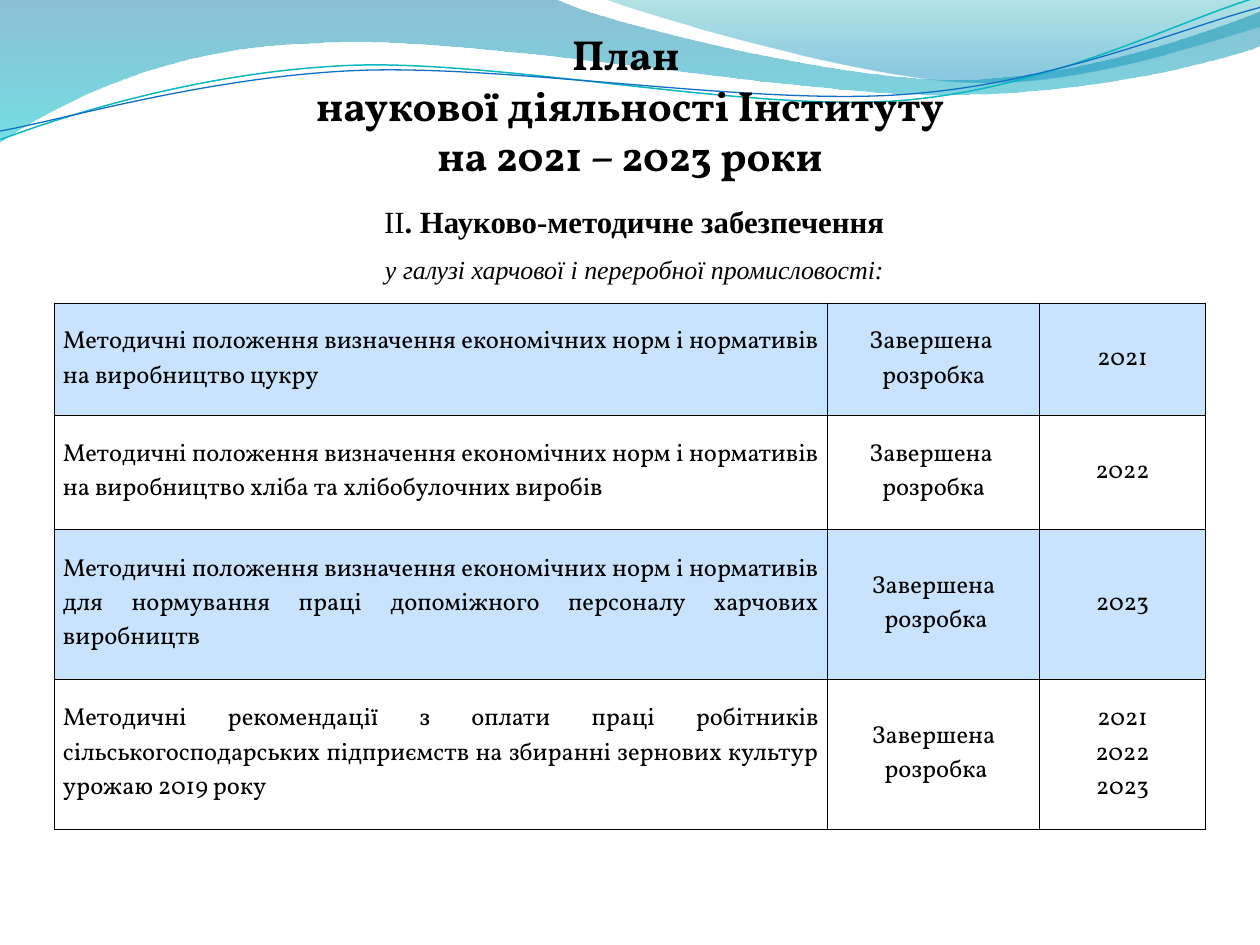
from dataclasses import dataclass
from math import cos, radians, sin
from typing import Optional

from lxml.etree import SubElement
from pptx import Presentation
from pptx.dml.color import RGBColor
from pptx.enum.text import MSO_ANCHOR as Anchor, PP_ALIGN as Align
from pptx.oxml.ns import qn
from pptx.util import Emu, Inches, Pt

Point = tuple[float, float]


@dataclass(frozen=True)
class Theme:
    text: str = "000000"
    band: str = "C8E3FB"
    heading_font: str = "Vollkorn"
    section_font: str = "Times New Roman"
    title: float = 24
    section: float = 17.6
    field: float = 14.8
    cell: float = 14
    border: float = 0.5
    top_border: float = 1


@dataclass(frozen=True)
class Stop:
    position: float
    color: str
    opacity: int


@dataclass(frozen=True)
class Wave:
    """An outline of straight steps (one point) and cubic curves (three points)."""
    start: Point
    steps: list[tuple[Point, ...]]
    stops: tuple[Stop, ...] = ()
    line: Optional[str] = None
    weight: float = 0
    tilt: float = 0


@dataclass(frozen=True)
class Task:
    name: str
    status: str
    years: str
    height: float


THEME = Theme()
WIDTH, HEIGHT = Inches(10), Inches(7.5)
GRID_COLUMNS = 10
UNIT = WIDTH / GRID_COLUMNS
TILT_CENTER = (5, 0.58)
TABLE_COLUMNS = (6.14, 1.68, 1.32)

WAVES = [
    Wave((0, 0), [
        ((4.4, -0.01),),
        ((4.76, 0.17), (6.64, 0.63), (7.58, 0.63)),
        ((8.53, 0.63), (9.58, 0.26), (10, 0.09)),
        ((10.01, 0.36),),
        ((9.83, 0.44), (8.7, 0.76), (7.46, 0.75)),
        ((6.22, 0.75), (3.82, 0.28), (2.57, 0.34)),
        ((1.29, 0.36), (0.46, 0.83), (-0.01, 1.13)),
        ((0, 0),),
    ], (Stop(0, "0074A1", 45), Stop(1, "00C6CF", 55))),
    Wave((4.79, -0.01), [
        ((5.09, 0.11), (6.82, 0.62), (7.69, 0.65)),
        ((8.56, 0.69), (9.61, 0.32), (10, 0.21)),
        ((10, 0),),
        ((4.79, -0.01),),
    ], (Stop(0, "00A1A9", 30), Stop(0.8, "008BBF", 45))),
    Wave((0, 1.11), [
        ((0.48, 0.93), (1.58, 0.57), (2.77, 0.52)),
        ((3.95, 0.47), (5.93, 0.89), (7.13, 0.8)),
        ((8.33, 0.71), (9.38, 0.15), (9.98, -0.02)),
    ], line="0AB8BF", weight=0.85, tilt=-2.7),
    Wave((0, 1.04), [
        ((0.47, 0.96), (1.64, 0.61), (2.83, 0.56)),
        ((4.03, 0.51), (5.97, 0.84), (7.17, 0.75)),
        ((8.36, 0.67), (9.41, 0.21), (10, 0.06)),
    ], line="0F6FC6", weight=0.75, tilt=-2.7),
]

NORMS = "Методичні положення визначення економічних норм і нормативів "
TASKS = [
    Task(NORMS + "на виробництво цукру", "Завершена \nрозробка", "2021", 0.89),
    Task(NORMS + "на виробництво хліба та хлібобулочних виробів",
         "Завершена \nрозробка", "2022", 0.9),
    Task(NORMS + "для нормування праці допоміжного персоналу харчових виробництв",
         "Завершена\n розробка", "2023", 1.19),
    Task("Методичні рекомендації з оплати праці робітників сільськогосподарських "
         "підприємств на збиранні зернових культур урожаю 2019 року",
         "Завершена\n розробка", "2021\n2022\n2023", 1.19),
]


def grid(count: float) -> Emu:
    return Emu(round(count * UNIT))


def level(point: Point, tilt: float) -> Point:
    """Place a point where it lies before the shape is turned by the tilt."""
    angle = radians(-tilt)
    (x, y), (center_x, center_y) = point, TILT_CENTER
    dx, dy = x - center_x, y - center_y
    return (center_x + dx * cos(angle) - dy * sin(angle),
            center_y + dx * sin(angle) + dy * cos(angle))


def bend(shape, steps: list[tuple[Point, ...]]) -> None:
    """Join the three line segments of each curved step into one cubic curve."""
    segments = shape.element.spPr.iter(qn("a:lnTo"))
    remaining = iter(list(segments))
    for step in steps:
        first, *others = [next(remaining) for _ in step]
        if not others:
            continue
        curve = first.makeelement(qn("a:cubicBezTo"))
        first.addprevious(curve)
        for segment in (first, *others):
            curve.append(segment[0])
            segment.getparent().remove(segment)


def draw_wave(slide, wave: Wave) -> None:
    points = [wave.start, *(point for step in wave.steps for point in step)]
    start, *rest = [tuple(map(grid, level(point, wave.tilt))) for point in points]
    builder = slide.shapes.build_freeform(*start)
    builder.add_line_segments(rest, close=bool(wave.stops))
    shape = builder.convert_to_shape()
    bend(shape, wave.steps)
    shape.rotation = wave.tilt
    shape.shadow.inherit = False
    if wave.line:
        shape.fill.background()
        shape.line.color.rgb = RGBColor.from_string(wave.line)
        shape.line.width = Pt(wave.weight)
        return
    shape.line.fill.background()
    shape.fill.gradient()
    shape.fill.gradient_angle = 270
    for target, stop in zip(shape.fill.gradient_stops, wave.stops):
        target.position = stop.position
        target.color.rgb = RGBColor.from_string(stop.color)
    for color, stop in zip(shape.element.spPr.iter(qn("a:srgbClr")), wave.stops):
        SubElement(color, qn("a:alpha"), val=str(stop.opacity * 1000))


def format_text(frame, font: str, size: float, align: Align, spacing: float = 1) -> None:
    for paragraph in frame.paragraphs:
        paragraph.alignment = align
        paragraph.line_spacing = spacing
        for run in paragraph.runs:
            run.font.name = font
            run.font.size = Pt(size)
            run.font.color.rgb = RGBColor.from_string(THEME.text)


def add_text(slide, left: float, top: float, width: float, height: float, text: str):
    frame = slide.shapes.add_textbox(*map(grid, (left, top, width, height))).text_frame
    frame.word_wrap = True
    frame.text = text
    return frame


def draw_headings(slide) -> None:
    title = add_text(slide, 2.4, 0.36, 5.2, 0.94,
                     "План \nнаукової діяльності Інституту\vна 2021 – 2023 роки")
    title.vertical_anchor = Anchor.MIDDLE
    format_text(title, THEME.heading_font, THEME.title, Align.CENTER)
    for paragraph in title.paragraphs:
        for run in paragraph.runs:
            run.font.bold = True

    section = add_text(slide, 0.35, 1.62, 9.37, 0.71,
                       "ІІ\nу галузі харчової і переробної промисловості:")
    number, field = section.paragraphs
    number.add_run().text = ". Науково-методичне забезпечення"
    format_text(section, THEME.section_font, THEME.section, Align.CENTER, 0.8)
    number.runs[1].font.bold = True
    field.space_before = Pt(11.5)
    field.runs[0].font.size = Pt(THEME.field)
    field.runs[0].font.italic = True


def set_borders(cell, top_weight: float) -> None:
    properties = cell._tc.get_or_add_tcPr()
    for index, side in enumerate(("lnL", "lnR", "lnT", "lnB")):
        weight = top_weight if side == "lnT" else THEME.border
        line = properties.makeelement(qn(f"a:{side}"), {"w": str(Pt(weight))})
        fill = SubElement(line, qn("a:solidFill"))
        SubElement(fill, qn("a:srgbClr"), val=THEME.text)
        properties.insert(index, line)


def draw_tasks(slide) -> None:
    height = sum(task.height for task in TASKS)
    table = slide.shapes.add_table(
        len(TASKS), len(TABLE_COLUMNS),
        *map(grid, (0.43, 2.41, sum(TABLE_COLUMNS), height))).table
    table.first_row = table.horz_banding = False
    for column, width in zip(table.columns, TABLE_COLUMNS):
        column.width = grid(width)
    for index, (row, task) in enumerate(zip(table.rows, TASKS)):
        row.height = grid(task.height)
        for cell, text in zip(row.cells, (task.name, task.status, task.years)):
            cell.text_frame.text = text
            cell.vertical_anchor = Anchor.MIDDLE
            cell.margin_left = cell.margin_right = grid(0.07)
            cell.margin_top = cell.margin_bottom = 0
            align = Align.JUSTIFY if text == task.name else Align.CENTER
            format_text(cell.text_frame, THEME.heading_font, THEME.cell, align)
            if index % 2:
                cell.fill.background()
            else:
                cell.fill.solid()
                cell.fill.fore_color.rgb = RGBColor.from_string(THEME.band)
            set_borders(cell, THEME.border if index else THEME.top_border)


def main() -> None:
    presentation = Presentation()
    presentation.slide_width, presentation.slide_height = WIDTH, HEIGHT
    slide = presentation.slides.add_slide(presentation.slide_layouts[6])
    for wave in WAVES:
        draw_wave(slide, wave)
    draw_headings(slide)
    draw_tasks(slide)
    presentation.save("out.pptx")


if __name__ == "__main__":
    main()
